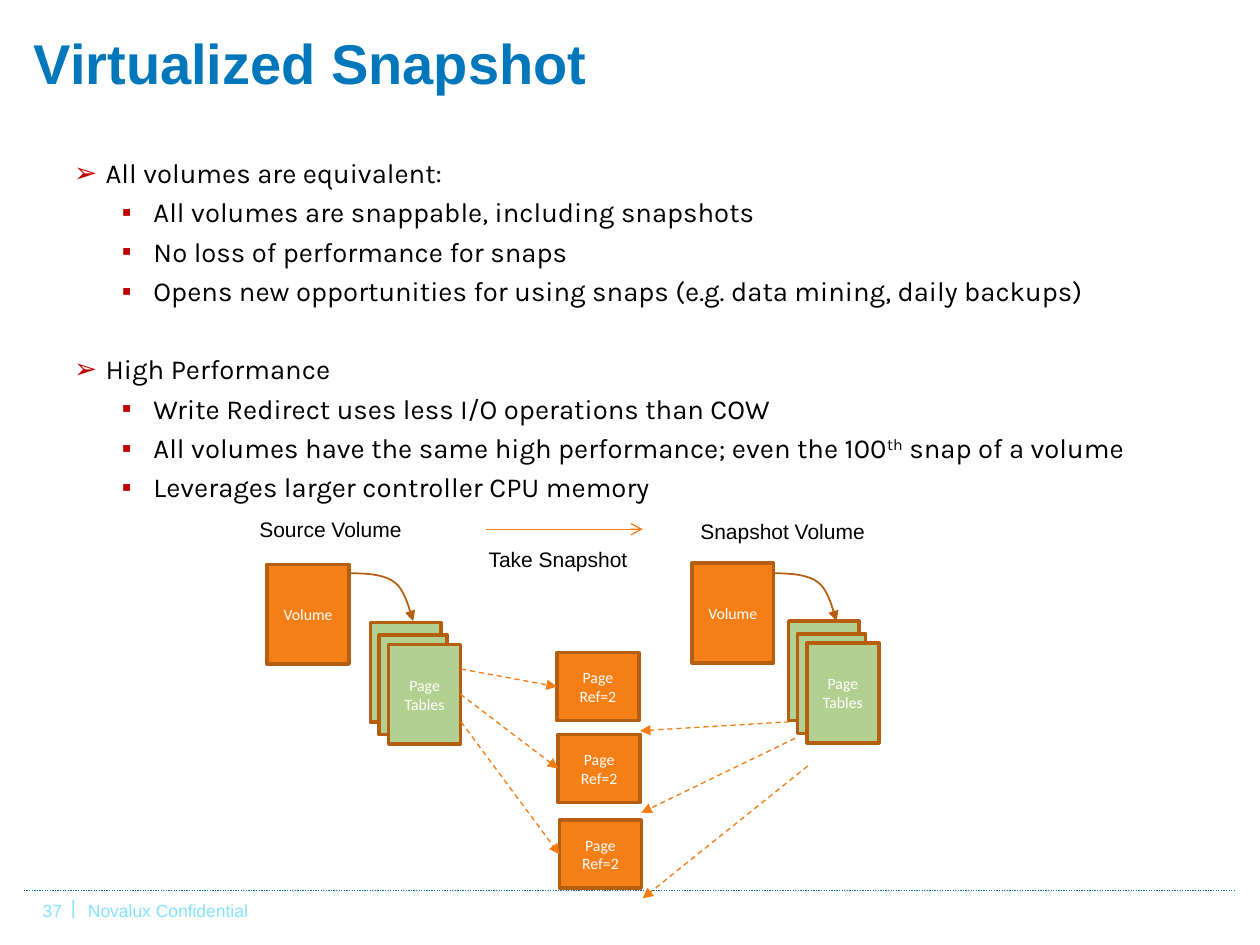
from pptx import Presentation
from pptx.dml.color import RGBColor
from pptx.enum.dml import MSO_LINE
from pptx.enum.shapes import MSO_CONNECTOR, MSO_SHAPE
from pptx.enum.text import MSO_ANCHOR, PP_ALIGN
from pptx.oxml.ns import qn
from pptx.util import Inches, Pt
from lxml.etree import SubElement

BLUE = RGBColor(0x00, 0x76, 0xBB)
RULE_BLUE = RGBColor(0x0F, 0x73, 0xC3)
PALE_BLUE = RGBColor(0x85, 0xE2, 0xFF)
ORANGE = RGBColor(0xF4, 0x7F, 0x16)
ARROW_ORANGE = RGBColor(0xF4, 0x7C, 0x10)
BROWN = RGBColor(0xB5, 0x5E, 0x10)
GREEN = RGBColor(0xB2, 0xD0, 0x90)
BLACK = RGBColor(0, 0, 0)
WHITE = RGBColor(255, 255, 255)

prs = Presentation()
prs.slide_width, prs.slide_height = Inches(10), Inches(7.5)
COL, ROW = prs.slide_width // 100, prs.slide_height // 75
slide = prs.slides.add_slide(prs.slide_layouts[6])
shapes = slide.shapes


def add_box(left, top, width, height, fill, text=""):
    box = shapes.add_shape(MSO_SHAPE.RECTANGLE, int(left * COL), int(top * ROW),
                           int(width * COL), int(height * ROW))
    box.shadow.inherit = False
    box.fill.solid()
    box.fill.fore_color.rgb = fill
    box.line.color.rgb = BROWN
    box.line.width = Pt(2)
    frame = box.text_frame
    frame.vertical_anchor = MSO_ANCHOR.MIDDLE
    frame.margin_left = frame.margin_right = 0
    frame.text = text
    for line in frame.paragraphs:
        line.alignment = PP_ALIGN.CENTER
        line.font.size, line.font.name = Pt(9), "Calibri"
        line.font.color.rgb = WHITE
    return box


def add_line(x1, y1, x2, y2, color, dash=None, head=None):
    line = shapes.add_connector(MSO_CONNECTOR.STRAIGHT, int(x1 * COL), int(y1 * ROW),
                                int(x2 * COL), int(y2 * ROW))
    line.line.color.rgb = color
    line.line.width = Pt(0.75)
    if dash:
        line.line.dash_style = dash
    if head:
        SubElement(line.line._get_or_add_ln(), qn("a:tailEnd"), type=head)
    SubElement(line._element.spPr, qn("a:effectLst"))
    return line


add_line(1.9, 70.7, 98.1, 70.7, RULE_BLUE, MSO_LINE.ROUND_DOT)

labels = [
    ("37", 2.4, 70.9, 5.1, 2.7, 10, PALE_BLUE),
    ("Novalux Confidential", 6, 70.9, 50, 4.7, 10, PALE_BLUE),
    ("|", 4.7, 70.6, 1.9, 2.7, 11, PALE_BLUE),
    ("Virtualized Snapshot", 1.7, 1.7, 74.7, 6.4, 32, BLUE),
    ("Source Volume", 19.6, 40.5, 14.7, 3, 12, BLACK),
    ("Take Snapshot", 37.8, 42.9, 14.4, 3, 12, BLACK),
    ("Snapshot Volume", 54.6, 40.7, 16.8, 3, 12, BLACK),
]
for text, left, top, width, height, size, color in labels:
    label = shapes.add_textbox(int(left * COL), int(top * ROW), int(width * COL), int(height * ROW))
    frame = label.text_frame
    frame.text = text
    frame.word_wrap = size == 32
    font = frame.paragraphs[0].font
    font.size, font.name, font.color.rgb = Pt(size), "Arial", color
    if size == 32:
        font.bold = True
        frame.vertical_anchor = MSO_ANCHOR.BOTTOM

benefits = [
    (1, "All volumes are equivalent:"),
    (2, "All volumes are snappable, including snapshots"),
    (2, "No loss of performance for snaps"),
    (2, "Opens new opportunities for using snaps (e.g. data mining, daily backups)"),
    (1, "High Performance"),
    (2, "Write Redirect uses less I/O operations than COW"),
    (2, "All volumes have the same high performance; even the 100^th^ snap of a volume"),
    (2, "Leverages larger controller CPU memory"),
]
BULLETS = {1: ("➢", 0.25), 2: ("▪", 0.63)}
body = shapes.add_textbox(int(4.9 * COL), int(11.9 * ROW), int(92.6 * COL), int(25.6 * ROW)).text_frame
body.word_wrap = True
for index, (level, text) in enumerate(benefits):
    para = body.paragraphs[0] if index == 0 else body.add_paragraph()
    para.level = level - 1
    if index:
        para.space_before = Pt(25.7 if level == 1 else 3.65)
    mark, indent = BULLETS[level]
    props = para._p.get_or_add_pPr()
    props.set("marL", str(Inches(indent)))
    props.set("indent", str(Inches(-0.25)))
    SubElement(SubElement(props, qn("a:buClr")), qn("a:srgbClr"), val="C00000")
    SubElement(props, qn("a:buFont"), typeface="Arial")
    SubElement(props, qn("a:buChar"), char=mark)
    for part, piece in enumerate(text.split("^")):
        run = para.add_run()
        run.text = piece
        run.font.size, run.font.name = Pt(15.7), "Karla"
        run.font.color.rgb = BLACK
        if part == 1:
            run.font._element.set("baseline", "30000")

add_line(38.6, 42, 51, 42, ARROW_ORANGE, head="arrow")

pages = [add_box(left, top, 6.5, 5.4, ORANGE, "Page\nRef=2")
         for left, top in ((44.2, 51.8), (44.3, 58.3), (44.4, 65.1))]

for ends in ((64.1, 57.2, 50.8, 58), (63.1, 58.6, 50.9, 64.5), (64.1, 60.8, 51, 71.3)):
    add_line(*ends, ARROW_ORANGE, MSO_LINE.DASH, "triangle")

CURVE = [((0, 0), (1.4, 0), (2.7, 0.1), (3.5, 0.7)),
         ((3.5, 0.7), (4.4, 1.3), (4.8, 3.3), (5, 3.8))]
STEPS = 10
tables = []
for volume_left, volume_top, stack_left, stack_top, curve_left in (
        (21.2, 44.8, 29.4, 49.4, 27.8), (54.9, 44.7, 62.6, 49.3, 61.4)):
    add_box(volume_left, volume_top, 6.5, 7.9, ORANGE, "Volume")
    add_box(stack_left, stack_top, 5.6, 7.9, GREEN)
    add_box(stack_left + 0.7, stack_top + 1, 5.4, 7.9, GREEN)
    tables.append(add_box(stack_left + 1.45, stack_top + 1.75, 5.7, 7.9, GREEN, "Page\nTables"))

    points = []
    for a, b, c, d in CURVE:
        for step in range(1, STEPS + 1):
            t = step / STEPS
            x, y = [(1 - t) ** 3 * p + 3 * (1 - t) ** 2 * t * q + 3 * (1 - t) * t ** 2 * r + t ** 3 * s
                    for p, q, r, s in zip(a, b, c, d)]
            points.append((int((curve_left + x) * COL), int((45.5 + y) * ROW)))
    builder = shapes.build_freeform(int(curve_left * COL), int(45.5 * ROW))
    builder.add_line_segments(points, close=False)
    pointer = builder.convert_to_shape()
    pointer.shadow.inherit = False
    pointer.fill.background()
    pointer.line.color.rgb = BROWN
    pointer.line.width = Pt(1)
    SubElement(pointer.line._get_or_add_ln(), qn("a:tailEnd"), type="triangle")

for page, start, end in zip(pages, (53.1, 55.1, 57.3), (54.5, 61, 67.8)):
    link = add_line(36.6, start, 44.3, end, ARROW_ORANGE, MSO_LINE.DASH, "triangle")
    if page is pages[1]:
        link.begin_connect(tables[0], 3)
    link.end_connect(page, 1)

prs.save("out.pptx")
